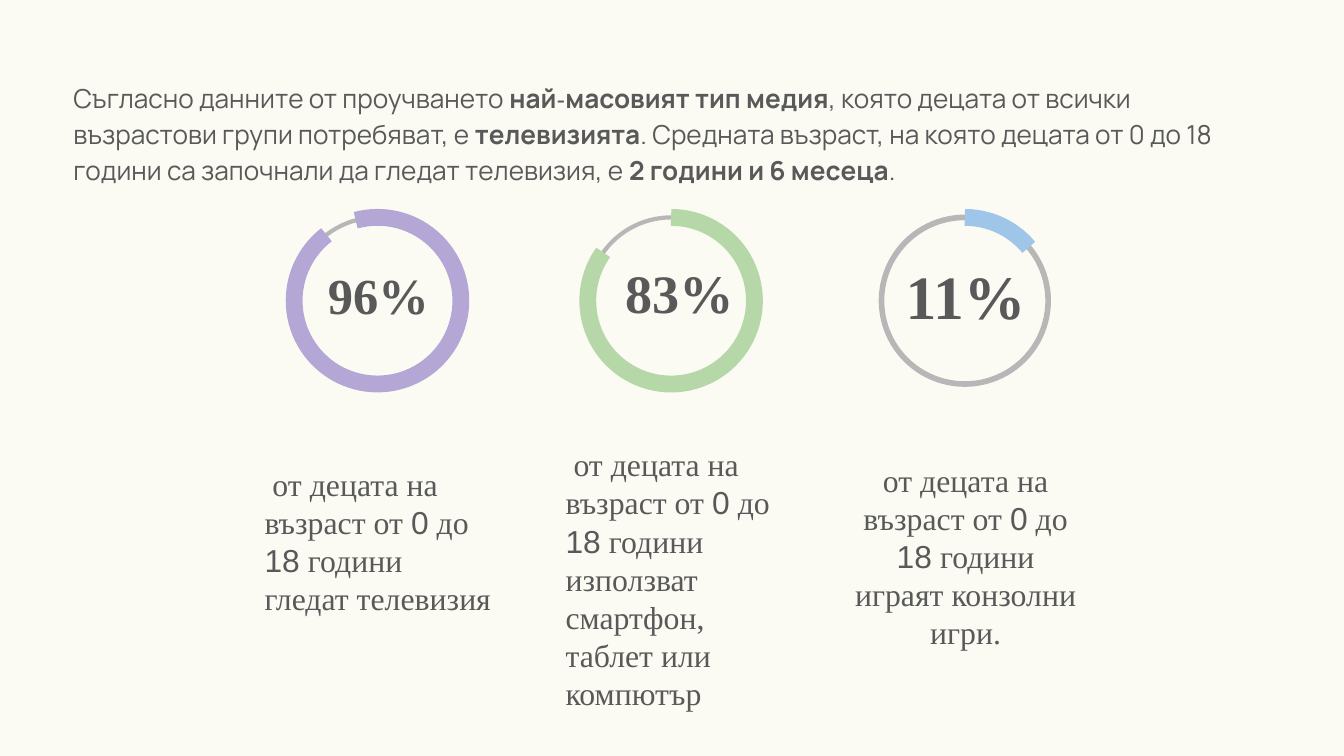
from dataclasses import dataclass

from pptx import Presentation
from pptx.dml.color import RGBColor
from pptx.enum.shapes import MSO_SHAPE
from pptx.enum.text import MSO_ANCHOR, PP_ALIGN
from pptx.slide import Slide
from pptx.util import Cm, Pt

ELLIPSE, ARC = MSO_SHAPE.OVAL, MSO_SHAPE.ARC
TOP, MIDDLE, BOTTOM = MSO_ANCHOR.TOP, MSO_ANCHOR.MIDDLE, MSO_ANCHOR.BOTTOM
LEFT, CENTER = PP_ALIGN.LEFT, PP_ALIGN.CENTER

BACKGROUND, INK, TRACK = "FBFBF4", "595959", "B7B7B7"
SERIF, SANS, INTRO_FONT = "Times New Roman", "Arial", "Manrope"
RING_LEFT, RING_STEP, RING_TOP, RING_SIZE = 5.56, 5.55, 4.11, 3.15
COLUMN_WIDTH, PERCENT_HEIGHT = 4.8, 1.35
CAPTION_SIZE, INTRO_SIZE = 17, 14


@dataclass(frozen=True)
class Run:
    text: str
    size: float
    font: str
    bold: bool = False


@dataclass(frozen=True)
class Box:
    """Text frame position and size in centimetres, with its alignment."""
    left: float
    top: float
    width: float
    height: float
    anchor: MSO_ANCHOR = TOP
    align: PP_ALIGN = LEFT
    line_spacing: float = 1.0


@dataclass(frozen=True)
class Statistic:
    percent: str
    percent_size: float
    percent_top: float
    opening: str
    activity: str
    caption_box: Box
    color: str
    start: float
    end: float
    track_width: float = 2.25


INTRO = [
    Run("Съгласно данните от проучването ", INTRO_SIZE, INTRO_FONT),
    Run("най", INTRO_SIZE, INTRO_FONT, True),
    Run("-", 11, INTRO_FONT, True),
    Run("масовият тип медия", INTRO_SIZE, INTRO_FONT, True),
    Run(", която децата от всички възрастови групи потребяват, е ",
        INTRO_SIZE, INTRO_FONT),
    Run("телевизията", INTRO_SIZE, INTRO_FONT, True),
    Run(". Средната възраст, на която децата от 0 до 18 години "
        "са започнали да гледат телевизия, е ", INTRO_SIZE, INTRO_FONT),
    Run("2 години и 6 месеца", INTRO_SIZE, INTRO_FONT, True),
    Run(".", INTRO_SIZE, INTRO_FONT),
]

# Arc angles are degrees, clockwise from three o'clock.
STATISTICS = [
    Statistic("96%", 27, 5.03, " от децата", "гледат телевизия",
              Box(4.75, 8.89, COLUMN_WIDTH, 3.02, BOTTOM),
              "B4A7D6", 254.85, 232.29),
    Statistic("83%", 29, 5.03, " от децата",
              "използват смартфон, таблет или компютър",
              Box(10.44, 8.89, COLUMN_WIDTH, 4.09, MIDDLE),
              "B6D7A8", 270, 215.43),
    Statistic("11%", 33, 5.18, "от децата", "играят конзолни игри.",
              Box(15.85, 8.46, COLUMN_WIDTH, 3.3, TOP, CENTER),
              "9FC5E8", 270, 320.22, 3),
]


def rgb(value: str) -> RGBColor:
    return RGBColor.from_string(value)


def add_text(slide: Slide, box: Box, runs: list[Run]) -> None:
    frame = slide.shapes.add_textbox(
        Cm(box.left), Cm(box.top), Cm(box.width), Cm(box.height)).text_frame
    frame.word_wrap = True
    frame.vertical_anchor = box.anchor
    frame.margin_left = frame.margin_right = Cm(0.25)
    frame.margin_top = frame.margin_bottom = Cm(0.25)
    paragraph = frame.paragraphs[0]
    paragraph.alignment = box.align
    paragraph.line_spacing = box.line_spacing
    for item in runs:
        run = paragraph.add_run()
        run.text = item.text
        run.font.size = Pt(item.size)
        run.font.name = item.font
        run.font.bold = item.bold
        run.font.color.rgb = rgb(INK)


def add_ring(slide: Slide, left: float, kind: MSO_SHAPE, color: str,
             width: float, angles: tuple[float, ...] = ()) -> None:
    ring = slide.shapes.add_shape(
        kind, Cm(left), Cm(RING_TOP), Cm(RING_SIZE), Cm(RING_SIZE))
    ring.shadow.inherit = False
    ring.fill.background()
    ring.line.color.rgb = rgb(color)
    ring.line.width = Pt(width)
    for index, angle in enumerate(angles):
        # A degree is 60000 units; adjustments count in 100000 units.
        ring.adjustments[index] = angle * 0.6


def add_statistic(slide: Slide, index: int, stat: Statistic) -> None:
    ring_left = RING_LEFT + index * RING_STEP
    caption = [
        Run(f"{stat.opening} на възраст от ", CAPTION_SIZE, SERIF),
        Run("0", CAPTION_SIZE, SANS),
        Run(" до ", CAPTION_SIZE, SERIF),
        Run("18", CAPTION_SIZE, SANS),
        Run(f" години {stat.activity}", CAPTION_SIZE, SERIF),
    ]
    percent_box = Box(stat.caption_box.left, stat.percent_top, COLUMN_WIDTH,
                      PERCENT_HEIGHT, BOTTOM, CENTER)
    add_ring(slide, ring_left, ELLIPSE, TRACK, stat.track_width)
    add_text(slide, stat.caption_box, caption)
    add_text(slide, percent_box,
             [Run(stat.percent, stat.percent_size, SERIF, True)])
    add_ring(slide, ring_left, ARC, stat.color, 9, (stat.start, stat.end))


def main() -> None:
    deck = Presentation()
    deck.slide_width, deck.slide_height = Cm(25.4), Cm(14.29)
    slide = deck.slides.add_slide(deck.slide_layouts[6])
    slide.background.fill.solid()
    slide.background.fill.fore_color.rgb = rgb(BACKGROUND)
    add_text(slide, Box(1.14, 1.22, 22.96, 2.67, line_spacing=1.15), INTRO)
    for index, stat in enumerate(STATISTICS):
        add_statistic(slide, index, stat)
    deck.save("out.pptx")


if __name__ == "__main__":
    main()
